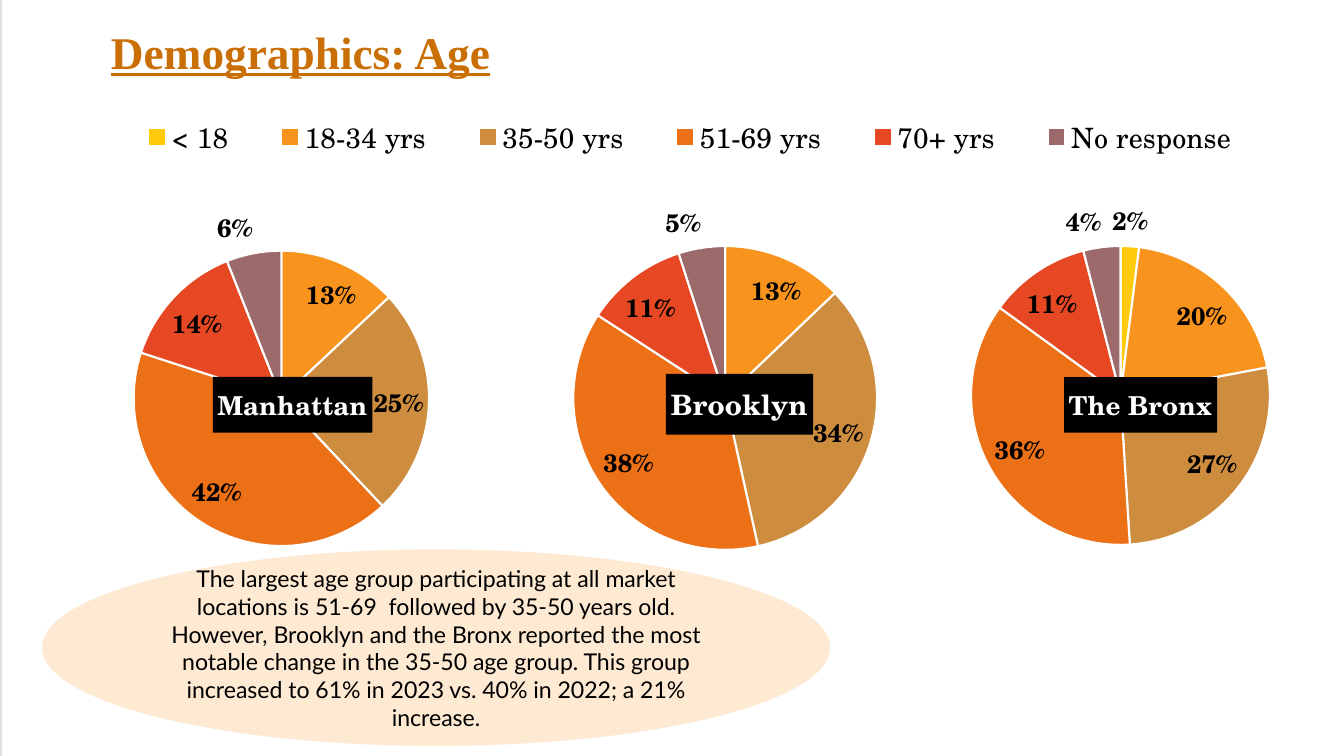
"""Build the age demographics slide with one pie chart per borough."""
from lxml.etree import SubElement
from pptx import Presentation
from pptx.chart.data import CategoryChartData
from pptx.dml.color import RGBColor
from pptx.enum.chart import XL_CHART_TYPE, XL_LABEL_POSITION, XL_LEGEND_POSITION
from pptx.enum.shapes import MSO_SHAPE
from pptx.enum.text import MSO_ANCHOR, MSO_AUTO_SIZE, PP_ALIGN
from pptx.oxml import parse_xml
from pptx.oxml.ns import nsdecls, qn
from pptx.util import Pt

SLIDE_SIZE = (960, 540)
CHART_FONT = "TeX Gyre Schola"
TITLE = "Demographics: Age"
SUMMARY = (
    "The largest age group participating at all market locations is 51-69  followed by "
    "35-50 years old. However, Brooklyn and the Bronx reported the most notable change in "
    "the 35-50 age group. This group increased to 61% in 2023 vs. 40% in 2022; a 21% increase."
)
AGE_GROUPS = {
    "< 18": "FFCA08",
    "18-34 yrs": "F8931D",
    "35-50 yrs": "CE8D3E",
    "51-69 yrs": "EC7016",
    "70+ yrs": "E64823",
    "No response": "9C6A6A",
}
LEGEND_BOX = (75, 82, 836, 32)
BROOKLYN = {
    "name": "Brooklyn", "name_size": 20, "name_at": (475.7, 267),
    "values": (0, 13, 34, 38, 11, 5),
    "frame": (1.5, 0, 958.5, 540), "center": (518, 284.3), "diameter": 217,
}
MANHATTAN = {
    "name": "Manhattan", "name_size": 18.6, "name_at": (152, 269.3),
    "values": (0, 13, 25, 42, 14, 6),
    "frame": (30, 80, 290, 321), "center": (201, 284.6), "diameter": 211,
}
BRONX = {
    "name": "The Bronx", "name_size": 18.6, "name_at": (760, 269.3),
    "values": (2, 20, 27, 36, 11, 4),
    "frame": (605, 135, 355, 270), "center": (800.4, 282.5), "diameter": 213.5,
}


def color(hex_text):
    return RGBColor.from_string(hex_text)


def style_font(font, name, size, hex_text, bold=False):
    font.name = name
    font.size = Pt(size)
    font.color.rgb = color(hex_text)
    font.bold = bold


def set_fill(target, hex_text):
    target.fill.solid()
    target.fill.fore_color.rgb = color(hex_text)


def manual_layout(frame, left, top, size=None, inner=False):
    """Return a chart layout element for a place given in slide points."""
    frame_left, frame_top, frame_width, frame_height = frame
    settings = [("layoutTarget", "inner")] if inner else []
    settings += [("xMode", "edge"), ("yMode", "edge")]
    settings += [("x", (left - frame_left) / frame_width), ("y", (top - frame_top) / frame_height)]
    if size:
        settings += [("w", size[0] / frame_width), ("h", size[1] / frame_height)]
    layout = parse_xml(f"<c:layout {nsdecls('c')}/>")
    manual = SubElement(layout, qn("c:manualLayout"))
    for tag, value in settings:
        text = value if isinstance(value, str) else f"{value:.4f}"
        SubElement(manual, qn(f"c:{tag}")).set("val", text)
    return layout


def place(element, layout, after=None):
    for old_layout in element.findall(qn("c:layout")):
        element.remove(old_layout)
    if after is None:
        element.insert(0, layout)
    else:
        element.find(qn(after)).addnext(layout)


def add_pie(slide, borough):
    frame = borough["frame"]
    data = CategoryChartData()
    data.categories = list(AGE_GROUPS)
    data.add_series("Series 1", borough["values"])
    chart = slide.shapes.add_chart(XL_CHART_TYPE.PIE, *map(Pt, frame), data).chart
    style_font(chart.font, CHART_FONT, 10, "000000")
    chart.has_legend = False

    chart.has_title = True
    chart.chart_title.include_in_layout = True
    chart.chart_title.text_frame.text = borough["name"]
    name_run = chart.chart_title.text_frame.paragraphs[0].runs[0]
    style_font(name_run.font, CHART_FONT, borough["name_size"], "FFFFFF", True)
    set_fill(chart.chart_title.format, "000000")
    title_element = chart.chart_title.text_frame._txBody.getparent().getparent()
    place(title_element, manual_layout(frame, *borough["name_at"]), "c:tx")

    diameter = borough["diameter"]
    left, top = (middle - diameter / 2 for middle in borough["center"])
    plot_layout = manual_layout(frame, left, top, (diameter, diameter), True)
    plot = chart.plots[0]
    place(plot._element.getparent(), plot_layout)

    plot.vary_by_categories = True
    for index, fill in enumerate(AGE_GROUPS.values()):
        point = plot.series[0].points[index]
        set_fill(point.format, fill)
        point.format.line.color.rgb = color("FFFFFF")
        point.format.line.width = Pt(1.5)

    labels = plot.series[0].data_labels
    style_font(labels.font, CHART_FONT, 18, "000000", True)
    labels.show_percentage = True
    labels.show_value = False
    labels.number_format = "0%"
    labels.number_format_is_linked = False
    labels.position = XL_LABEL_POSITION.BEST_FIT
    empty_groups = [index for index, value in enumerate(borough["values"]) if value == 0]
    for position, index in enumerate(empty_groups):
        hidden = parse_xml(
            f'<c:dLbl {nsdecls("c")}><c:idx val="{index}"/><c:delete val="1"/></c:dLbl>'
        )
        labels._element.insert(position, hidden)
    return chart


def add_legend(chart, frame):
    chart.has_legend = True
    chart.legend.position = XL_LEGEND_POSITION.TOP
    chart.legend.include_in_layout = False
    style_font(chart.legend.font, CHART_FONT, 20, "000000")
    left, top, width, height = LEGEND_BOX
    layout = manual_layout(frame, left, top, (width, height))
    place(chart.legend._element, layout, "c:legendPos")


def fill_chart_area(chart, hex_text):
    area = parse_xml(
        f'<c:spPr {nsdecls("c", "a")}><a:solidFill><a:srgbClr val="{hex_text}"/></a:solidFill>'
        "<a:ln><a:noFill/></a:ln></c:spPr>"
    )
    chart._chartSpace.find(qn("c:chart")).addnext(area)


def format_title(slide):
    title = slide.shapes.title
    title.left, title.top, title.width, title.height = map(Pt, (72, 16, 301, 46))
    frame = title.text_frame
    frame.text = TITLE
    frame.auto_size = MSO_AUTO_SIZE.NONE
    frame.vertical_anchor = MSO_ANCHOR.MIDDLE
    paragraph = frame.paragraphs[0]
    paragraph.alignment = PP_ALIGN.LEFT
    paragraph.line_spacing = 0.9
    style_font(paragraph.runs[0].font, "Times New Roman", 32.4, "CA6F06", True)
    paragraph.runs[0].font.underline = True
    slide.shapes._spTree.append(title._element)


def add_summary(slide):
    ellipse = slide.shapes.add_shape(MSO_SHAPE.OVAL, *map(Pt, (30, 392.4, 563, 140.4)))
    ellipse.shadow.inherit = False
    set_fill(ellipse, "FEE9D2")
    ellipse.line.fill.background()
    frame = ellipse.text_frame
    frame.text = SUMMARY
    frame.word_wrap = True
    frame.vertical_anchor = MSO_ANCHOR.MIDDLE
    frame.paragraphs[0].alignment = PP_ALIGN.CENTER
    style_font(frame.paragraphs[0].runs[0].font, "Lato", 16.5, "000000")


def main():
    presentation = Presentation()
    presentation.slide_width, presentation.slide_height = map(Pt, SLIDE_SIZE)
    slide = presentation.slides.add_slide(presentation.slide_layouts[5])
    set_fill(slide.background, "E5DEDB")
    brooklyn_chart = add_pie(slide, BROOKLYN)
    add_legend(brooklyn_chart, BROOKLYN["frame"])
    fill_chart_area(brooklyn_chart, "FFFFFF")
    format_title(slide)
    add_pie(slide, MANHATTAN)
    add_pie(slide, BRONX)
    add_summary(slide)
    presentation.save("out.pptx")


if __name__ == "__main__":
    main()
